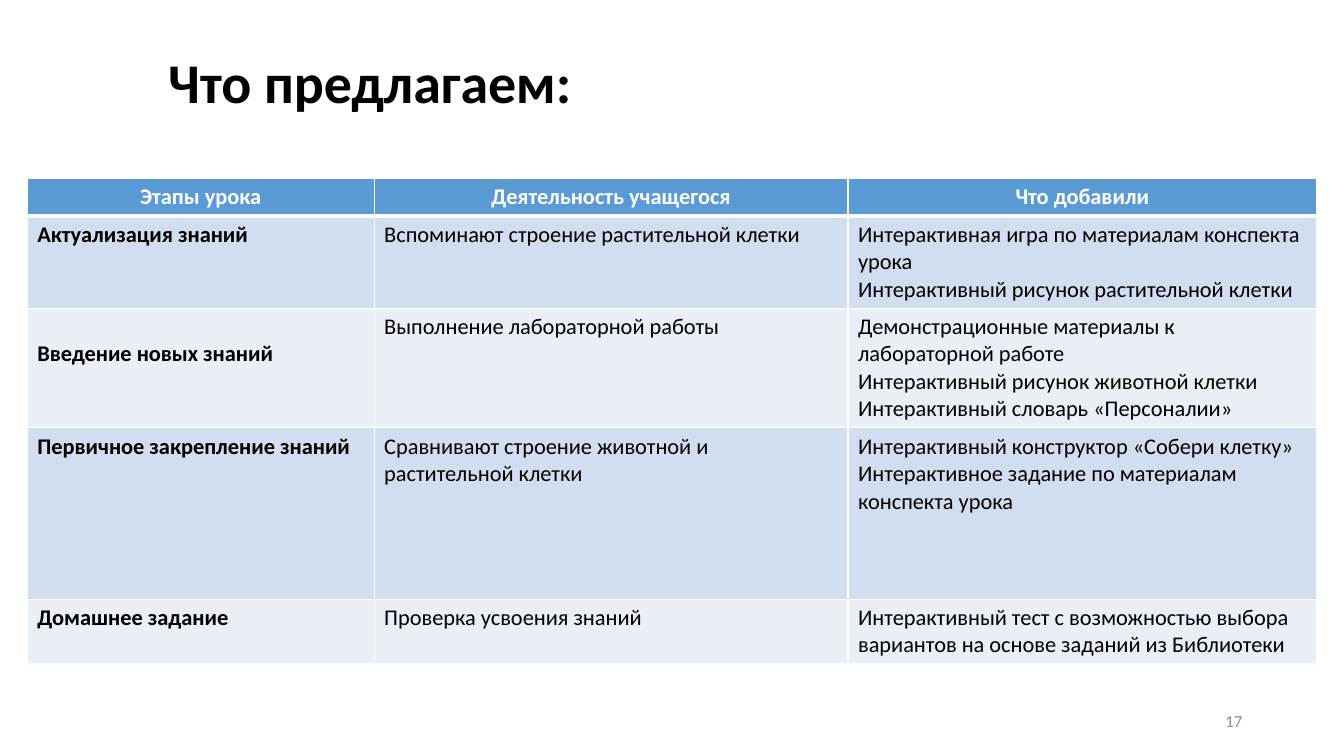
from pptx import Presentation
from pptx.dml.color import RGBColor
from pptx.enum.text import MSO_ANCHOR, PP_ALIGN
from pptx.oxml import parse_xml
from pptx.oxml.ns import nsdecls
from pptx.util import Inches, Pt

LEFT, CENTER, RIGHT = PP_ALIGN.LEFT, PP_ALIGN.CENTER, PP_ALIGN.RIGHT
MIDDLE = MSO_ANCHOR.MIDDLE

COLORS = {
    "white": "FFFFFF",
    "black": "000000",
    "gray": "8C8C8C",
    "head": "5B9BD5",
    "odd": "D2DEEF",
    "even": "EAEFF7",
}
SIDES = ("L", "R", "T", "B")
COLS = (25.81, 35.26, 34.88)
ROWS = (4.8, 10.53, 12, 22.67, 8.27)
HEADS = ("Этапы урока", "Деятельность учащегося", "Что добавили")
STAGES = (
    ("Актуализация знаний",
     "Вспоминают строение растительной клетки",
     ["Интерактивная игра по материалам конспекта урока\n"
      "Интерактивный рисунок растительной клетки"]),
    ("Введение новых знаний",
     "Выполнение лабораторной работы",
     ["Демонстрационные материалы к лабораторной работе",
      "Интерактивный рисунок животной клетки",
      "Интерактивный словарь «Персоналии»"]),
    ("Первичное закрепление знаний",
     "Сравнивают строение животной и растительной клетки",
     ["Интерактивный конструктор «Собери клетку»",
      "Интерактивное задание по материалам конспекта урока"]),
    ("Домашнее задание",
     "Проверка усвоения знаний",
     ["Интерактивный тест с возможностью выбора вариантов "
      "на основе заданий из Библиотеки"]),
)
LOWERED = (2, 0)  # row and column of the cell whose text starts a line lower


class Deck:
    font = "Calibri"

    def __init__(self):
        self.prs = Presentation()
        self.prs.slide_width = Inches(13.33)
        self.prs.slide_height = Inches(7.5)
        self.slide = self.prs.slides.add_slide(self.prs.slide_layouts[6])

    def wide(self, share):
        """Length of a percentage of the slide's width."""
        return int(self.prs.slide_width * share / 100)

    def high(self, share):
        """Length of a percentage of the slide's height."""
        return int(self.prs.slide_height * share / 100)

    def place(self, x, y, w, h):
        return self.wide(x), self.high(y), self.wide(w), self.high(h)

    def fill_text(self, frame, lines, color, align=LEFT, space=None, **style):
        for i, line in enumerate(lines):
            para = frame.add_paragraph() if i else frame.paragraphs[0]
            para.text = line
            para.alignment = align
            para.line_spacing = space
            for run in para.runs:
                for name, value in {"name": self.font, **style}.items():
                    setattr(run.font, name, value)
                run.font.color.rgb = RGBColor.from_string(COLORS[color])

    def text(self, box, line, color, **style):
        frame = self.slide.shapes.add_textbox(*self.place(*box)).text_frame
        frame.word_wrap = True
        frame.vertical_anchor = MIDDLE
        self.fill_text(frame, [line], color, **style)

    def border(self, cell, bottom):
        props = cell._tc.get_or_add_tcPr()
        for i, side in enumerate(SIDES):
            width = Pt(bottom if side == "B" else 1)
            props.insert(i, parse_xml(
                f'<a:ln{side} {nsdecls("a")} w="{width}"><a:solidFill>'
                f'<a:srgbClr val="{COLORS["white"]}"/></a:solidFill></a:ln{side}>'))

    def cell(self, cell, lines, fill, color, bottom=1, **style):
        cell.fill.solid()
        cell.fill.fore_color.rgb = RGBColor.from_string(COLORS[fill])
        self.border(cell, bottom)
        self.fill_text(cell.text_frame, lines, color, size=Pt(16), **style)

    def table(self, x, y):
        box = self.place(x, y, sum(COLS), sum(ROWS))
        grid = self.slide.shapes.add_table(len(ROWS), len(COLS), *box).table
        for col, share in zip(grid.columns, COLS):
            col.width = self.wide(share)
        for row, share in zip(grid.rows, ROWS):
            row.height = self.high(share)
        for c, head in enumerate(HEADS):
            self.cell(grid.cell(0, c), [head], "head", "white", bottom=3,
                      align=CENTER, bold=True)
        for r, (stage, work, added) in enumerate(STAGES, 1):
            fill = "odd" if r % 2 else "even"
            for c, lines in enumerate(([stage], [work], added)):
                self.cell(grid.cell(r, c), lines, fill, "black", bold=c == 0)
        grid.cell(*LOWERED).margin_top = Inches(0.32)


def main():
    deck = Deck()
    deck.table(2.03, 23.6)
    deck.text((70.67, 92.67, 22.5, 5.33), "17", "gray", align=RIGHT, size=Pt(12))
    deck.text((11.78, 4.4, 82.6, 13.73), "Что предлагаем:", "black",
              space=0.9, size=Pt(40), bold=True)
    deck.prs.save("out.pptx")


if __name__ == "__main__":
    main()
